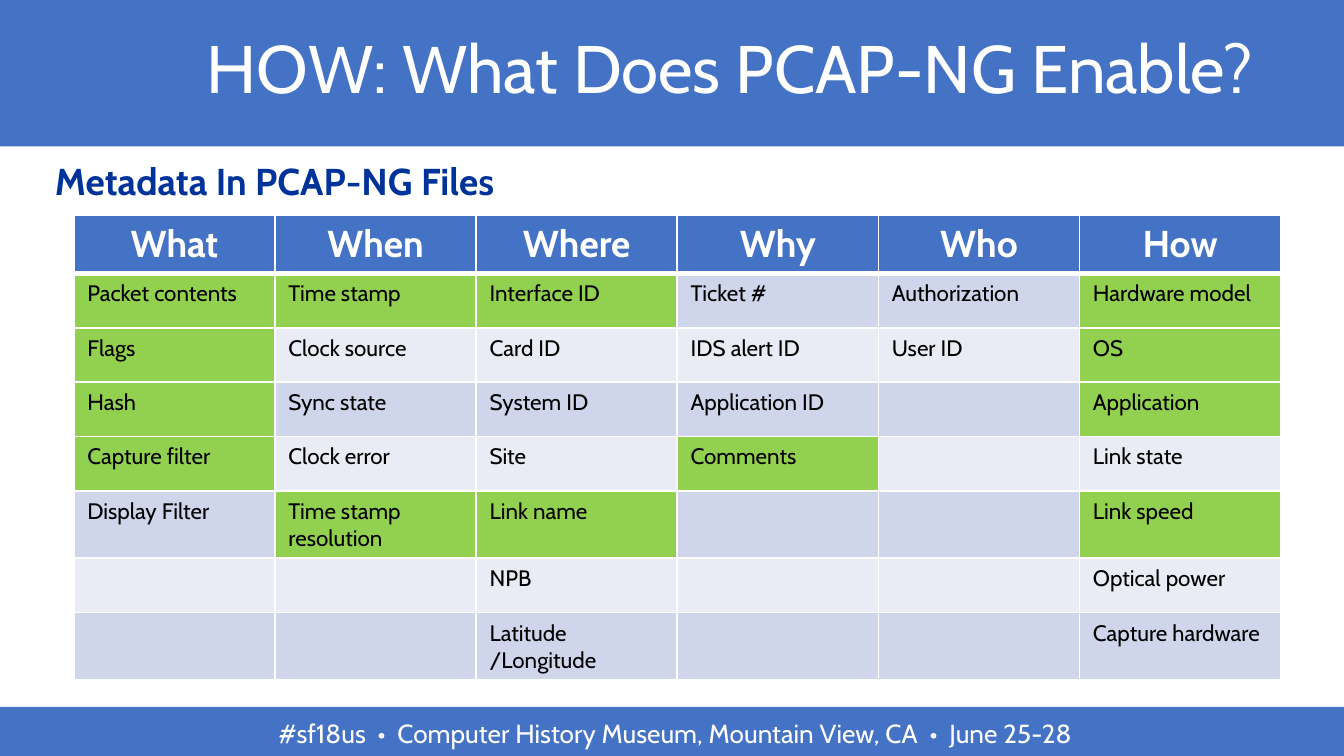
from pptx import Presentation
from pptx.dml.color import RGBColor
from pptx.enum.shapes import MSO_SHAPE
from pptx.enum.text import MSO_ANCHOR, PP_ALIGN
from pptx.oxml import parse_xml
from pptx.oxml.ns import nsdecls
from pptx.util import Inches, Pt

# Content
TITLE = "HOW: What Does PCAP-NG Enable?"
SUBTITLE = "Metadata In PCAP-NG Files"
FOOTER = "#sf18us  •  Computer History Museum, Mountain View, CA  •  June 25-28"
HEADERS = ["What", "When", "Where", "Why", "Who", "How"]
ROWS = [
    ["Packet contents", "Time stamp", "Interface ID", "Ticket #", "Authorization", "Hardware model"],
    ["Flags", "Clock source", "Card ID", "IDS alert ID", "User ID", "OS"],
    ["Hash", "Sync state", "System ID", "Application ID", "", "Application"],
    ["Capture filter", "Clock error", "Site", "Comments", "", "Link state"],
    ["Display Filter", "Time stamp resolution", "Link name", "", "", "Link speed"],
    ["", "", "NPB", "", "", "Optical power"],
    ["", "", "Latitude /Longitude", "", "", "Capture hardware"],
]
ENABLED = {
    "Packet contents", "Flags", "Hash", "Capture filter", "Time stamp",
    "Time stamp resolution", "Interface ID", "Link name", "Comments",
    "Hardware model", "OS", "Application", "Link speed",
}

# Style
BLUE = RGBColor(0x44, 0x72, 0xC4)
NAVY = RGBColor(0x00, 0x33, 0x99)
GREEN = RGBColor(0x92, 0xD0, 0x50)
WHITE = RGBColor(0xFF, 0xFF, 0xFF)
BLACK = RGBColor(0x00, 0x00, 0x00)
BANDS = [RGBColor(0xCF, 0xD5, 0xEA), RGBColor(0xE9, 0xEB, 0xF5)]
TITLE_FONT = {"size": Pt(36), "color": WHITE}
SUBTITLE_FONT = {"size": Pt(20), "color": NAVY, "bold": True}
FOOTER_FONT = {"size": Pt(14), "color": WHITE}
HEADER_FONT = {"size": Pt(20), "color": WHITE, "bold": True}
CELL_FONT = {"size": Pt(12), "color": BLACK, "bold": False}
TABLE_WIDTH, TABLE_HEIGHT = Inches(8.98), Inches(3.24)


def write(frame, text, font, align=PP_ALIGN.LEFT):
    frame.word_wrap = True
    paragraph = frame.paragraphs[0]
    paragraph.alignment = align
    run = paragraph.add_run()
    run.text = text
    run.font.name = "Cabin"
    for name, value in font.items():
        if name == "color":
            run.font.color.rgb = value
        else:
            setattr(run.font, name, value)
    return paragraph


def add_band(slide, *box):
    band = slide.shapes.add_shape(MSO_SHAPE.RECTANGLE, *map(Inches, box))
    band.shadow.inherit = False
    band.fill.solid()
    band.fill.fore_color.rgb = BLUE
    band.line.fill.background()


def add_text(slide, box, *content):
    write(slide.shapes.add_textbox(*map(Inches, box)).text_frame, *content)


def set_borders(cell, top, bottom):
    properties = cell._tc.get_or_add_tcPr()
    for side, points in (("L", 1), ("R", 1), ("T", top), ("B", bottom)):
        properties.append(parse_xml(
            f'<a:ln{side} {nsdecls("a")} w="{Pt(points)}"><a:solidFill>'
            f'<a:srgbClr val="{WHITE}"/></a:solidFill></a:ln{side}>'))


presentation = Presentation()
presentation.slide_width = Inches(10)
presentation.slide_height = Inches(10) * 9 // 16
slide = presentation.slides.add_slide(presentation.slide_layouts[5])

# Header and footer bands
add_band(slide, 0, 0, 10.01, 1.09)
add_band(slide, 0, 5.26, 10, 0.39)
add_text(slide, (0.5, 5.29, 9.05, 0.39), FOOTER, FOOTER_FONT, PP_ALIGN.CENTER)

# Title, brought in front of the header band
title = slide.shapes.title
title.element.getparent().append(title.element)
title.left, title.top, title.width, title.height = map(Inches, (0.85, 0, 9.16, 1.07))
title.text_frame.vertical_anchor = MSO_ANCHOR.MIDDLE
for side in ("left", "top", "right", "bottom"):
    setattr(title.text_frame, f"margin_{side}", Inches(0.1))
write(title.text_frame, TITLE, TITLE_FONT, PP_ALIGN.CENTER).line_spacing = 0.9

add_text(slide, (0.31, 1.13, 9.45, 0.44), SUBTITLE, SUBTITLE_FONT)

# Metadata table
grid = [HEADERS] + ROWS
table = slide.shapes.add_table(
    len(grid), len(HEADERS), Inches(0.55), Inches(1.6), TABLE_WIDTH, TABLE_HEIGHT).table
for r, texts in enumerate(grid):
    for c, text in enumerate(texts):
        cell = table.cell(r, c)
        set_borders(cell, 3 if r == 1 else 1, 3 if r == 0 else 1)
        cell.fill.solid()
        if r == 0:
            cell.fill.fore_color.rgb = BLUE
            write(cell.text_frame, text, HEADER_FONT, PP_ALIGN.CENTER)
        else:
            cell.fill.fore_color.rgb = GREEN if text in ENABLED else BANDS[(r - 1) % 2]
            if text:
                write(cell.text_frame, text, CELL_FONT)

presentation.save("out.pptx")
